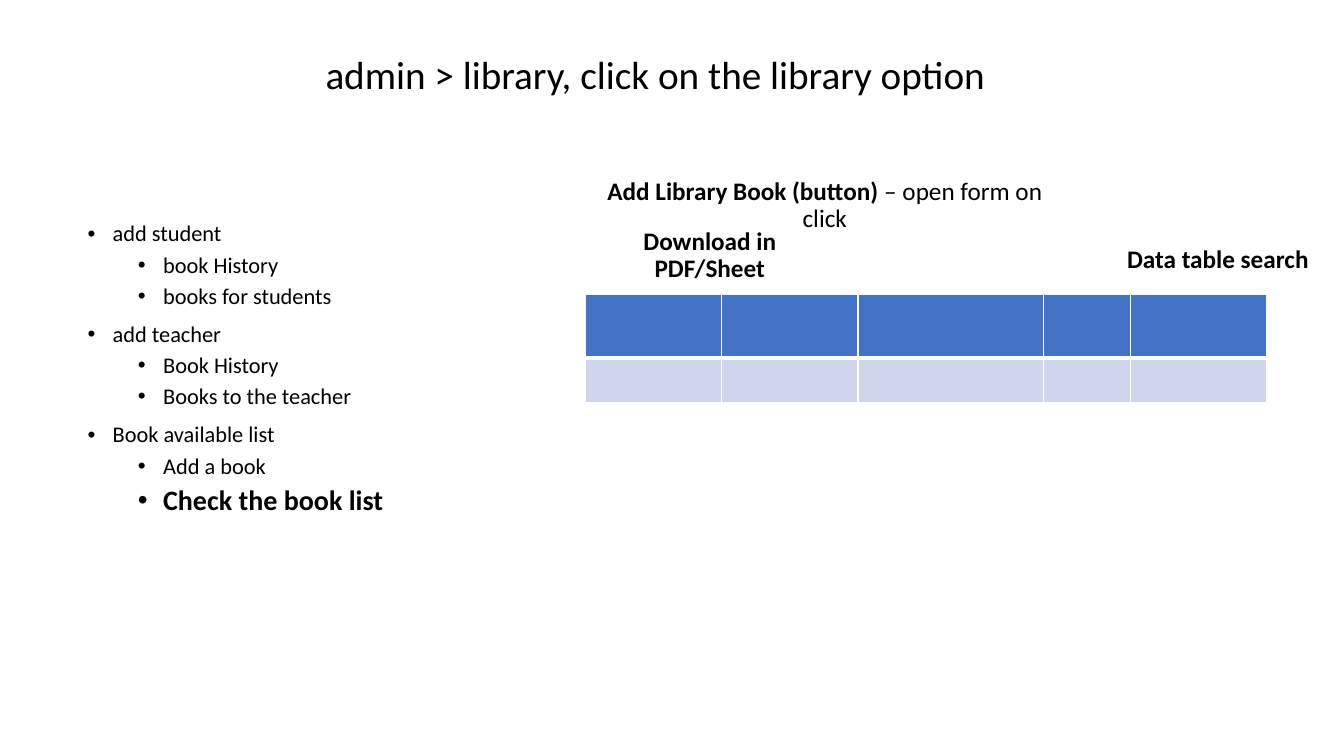
"""Build the library admin slide with its menu list and empty data table."""
import pptx
import pptx.dml.color
import pptx.enum.text
import pptx.oxml
import pptx.oxml.ns
import pptx.util
from lxml import etree

Inches, Pt = pptx.util.Inches, pptx.util.Pt
Anchor = pptx.enum.text.MSO_ANCHOR
Align = pptx.enum.text.PP_ALIGN

TITLE = ("admin > library, click on the library option", (3.13, 0.45, 7.82, 0.57))
LABELS = [
    ([("Add Library Book (button)", True), (" – open form on click", False)],
     (5.69, 1.96, 4.98, 0.4)),
    ([("Data table search", True)], (11.01, 2.37, 2.14, 0.4)),
    ([("Download in PDF/Sheet", True)], (5.72, 2.46, 2.64, 0.4)),
]
MENU = [
    ("add student", ["book History", "books for students"]),
    ("add teacher", ["Book History", "Books to the teacher"]),
    ("Book available list", ["Add a book", "Check the book list"]),
]
STRONG = "Check the book list"
MENU_BOX = (0.77, 2.16, 4.3, 4.05)
TABLE_BOX = (5.81, 2.92, 6.75, 1.06)
COLS = [1.35, 1.35, 1.84, 0.86, 1.35]
ROWS = [
    (0.63, "4472C4", {"L": 1, "R": 1, "T": 1, "B": 3}),
    (0.44, "CFD5EA", {"L": 1, "R": 1, "B": 1}),
]


def color(code):
    return pptx.dml.color.RGBColor.from_string(code)


def style(run, size, bold=False):
    run.font.name = "Calibri"
    run.font.size = Pt(size)
    run.font.bold = bold
    run.font.color.rgb = color("000000")


def add_box(slide, box, anchor=Anchor.TOP):
    frame = slide.shapes.add_textbox(*map(Inches, box)).text_frame
    frame.word_wrap = True
    frame.vertical_anchor = anchor
    return frame


def add_item(para, text, level):
    para.text = text
    para.level = level
    para.line_spacing = 0.9
    para.space_before = Pt(5 if level else 10)
    strong = text == STRONG
    style(para.runs[0], 20 if strong else 16, strong)
    props = para._p.get_or_add_pPr()
    props.set("marL", str(Inches(0.25 + 0.5 * level)))
    props.set("indent", str(Inches(-0.25)))
    font = etree.SubElement(props, pptx.oxml.ns.qn("a:buFont"))
    font.set("typeface", "Arial")
    mark = etree.SubElement(props, pptx.oxml.ns.qn("a:buChar"))
    mark.set("char", "•")


def edge(cell, side, width):
    props = cell._tc.get_or_add_tcPr()
    props.append(pptx.oxml.parse_xml(
        f'<a:ln{side} {pptx.oxml.ns.nsdecls("a")} w="{Pt(width)}">'
        '<a:solidFill><a:srgbClr val="FFFFFF"/></a:solidFill>'
        f'</a:ln{side}>'))


def add_grid(slide):
    shape = slide.shapes.add_table(len(ROWS), len(COLS), *map(Inches, TABLE_BOX))
    table = shape.table
    for col, width in zip(table.columns, COLS):
        col.width = Inches(width)
    for row, (height, fill, edges) in zip(table.rows, ROWS):
        row.height = Inches(height)
        for cell in row.cells:
            for side, width in edges.items():
                edge(cell, side, width)
            cell.fill.solid()
            cell.fill.fore_color.rgb = color(fill)


def main():
    deck = pptx.Presentation()
    deck.slide_width, deck.slide_height = Inches(13.33), Inches(7.5)
    slide = deck.slides.add_slide(deck.slide_layouts[6])

    text, box = TITLE
    frame = add_box(slide, box)
    frame.auto_size = pptx.enum.text.MSO_AUTO_SIZE.SHAPE_TO_FIT_TEXT
    frame.text = text
    style(frame.paragraphs[0].runs[0], 28)

    add_grid(slide)

    for parts, box in LABELS:
        para = add_box(slide, box, Anchor.BOTTOM).paragraphs[0]
        para.alignment = Align.CENTER
        para.line_spacing = 0.9
        for text, bold in parts:
            run = para.add_run()
            run.text = text
            style(run, 18, bold)

    items = [(text, level) for head, subs in MENU
             for text, level in [(head, 0)] + [(sub, 1) for sub in subs]]
    frame = add_box(slide, MENU_BOX)
    for i, (text, level) in enumerate(items):
        para = frame.add_paragraph() if i else frame.paragraphs[0]
        add_item(para, text, level)

    deck.save("out.pptx")


if __name__ == "__main__":
    main()
